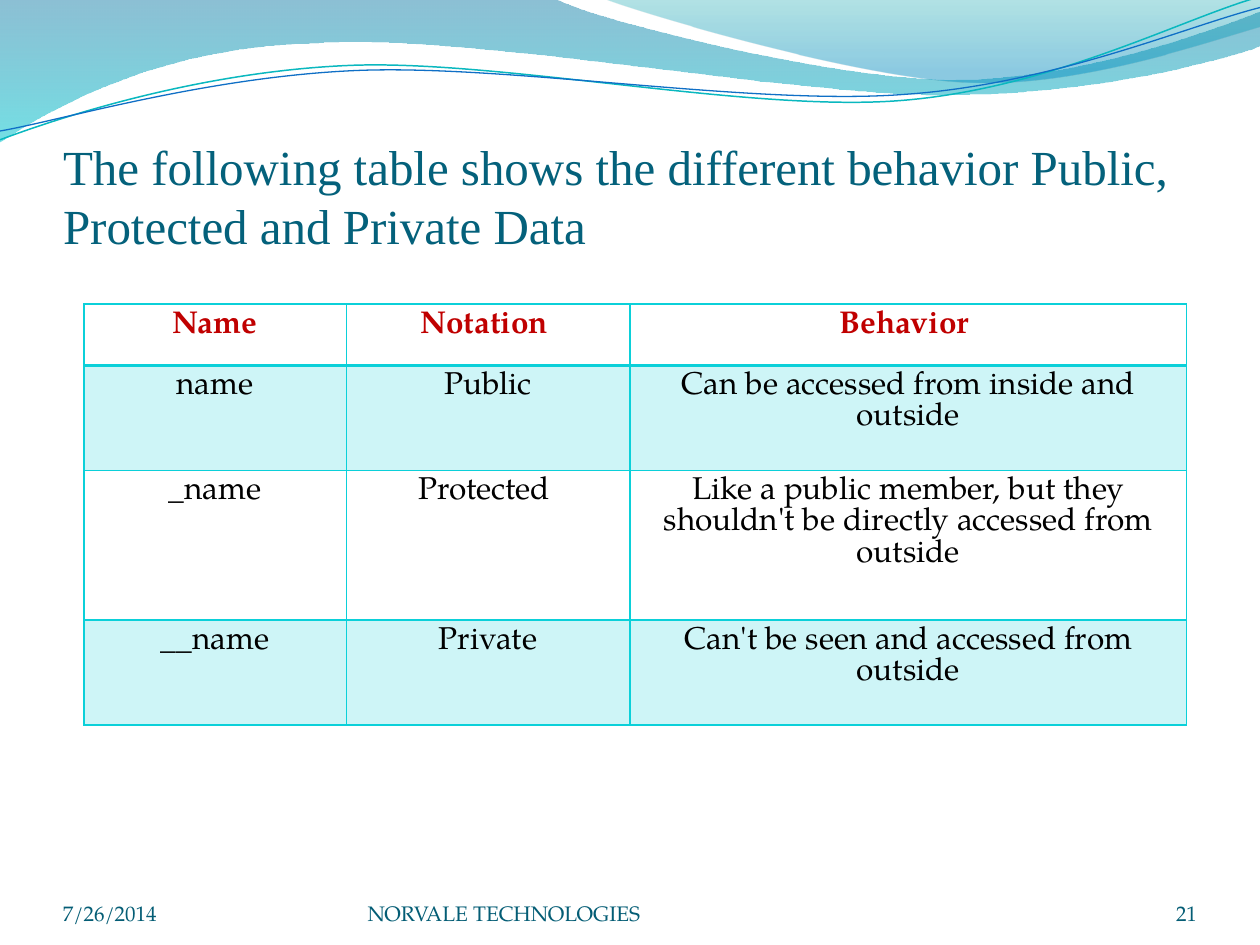
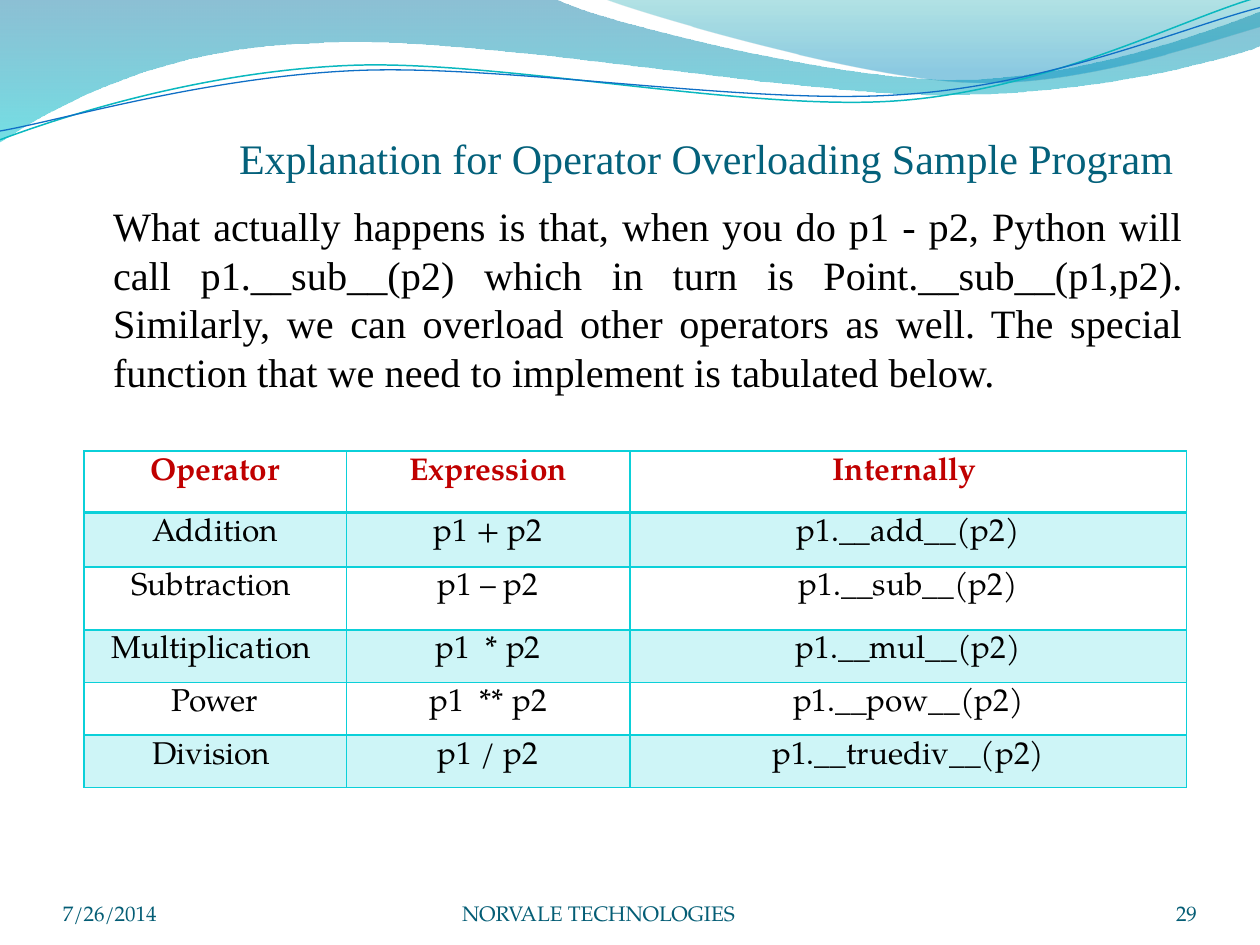
from lxml.etree import SubElement
from pptx import Presentation
from pptx.dml.color import RGBColor
from pptx.enum.text import MSO_ANCHOR, PP_ALIGN
from pptx.oxml.ns import qn
from pptx.util import Cm, Pt

SERIF = "Times New Roman"
PAGELLA = "TeX Gyre Pagella"
TITLE_TEAL = RGBColor(0x04, 0x61, 0x7B)
FOOTER_TEAL = RGBColor(0x04, 0x5D, 0x75)
HEADER_RED = RGBColor(0xC0, 0x00, 0x00)
BLACK = RGBColor(0x00, 0x00, 0x00)
TURQUOISE = RGBColor(0x0B, 0xD0, 0xD9)
LINE_TEAL = RGBColor(0x0A, 0xB8, 0xBF)
LINE_BLUE = RGBColor(0x0F, 0x6F, 0xC6)
DEEP_BLUE = RGBColor(0x00, 0x74, 0xA1)
AQUA = RGBColor(0x00, 0xC6, 0xCF)
SEA_GREEN = RGBColor(0x00, 0xA1, 0xA9)
SKY_BLUE = RGBColor(0x00, 0x8B, 0xBF)

# Wave outlines in hundredths of the unit: pairs are straight steps, sixes Bezier curves
WAVE_UNIT = Cm(2.54)
BANDS = [
    ([(0, 0), (440, -1), (476, 17, 664, 63, 758, 63), (853, 63, 958, 26, 1000, 9),
      (1001, 36), (983, 44, 870, 76, 746, 75), (622, 75, 382, 28, 257, 34),
      (129, 36, 46, 83, -1, 113)],
     [(0, DEEP_BLUE, 45), (1, AQUA, 55)]),
    ([(479, -1), (509, 11, 682, 62, 769, 65), (856, 69, 961, 32, 1000, 21), (1000, 0)],
     [(0, SEA_GREEN, 30), (0.8, SKY_BLUE, 45)]),
]
WAVE_LINES = [
    ([(0, 111), (48, 93, 158, 57, 277, 52), (395, 47, 593, 89, 713, 80),
      (833, 71, 938, 15, 998, -2)], LINE_TEAL, 0.85),
    ([(0, 104), (47, 96, 164, 61, 283, 56), (403, 51, 597, 84, 717, 75),
      (836, 67, 941, 21, 1000, 6)], LINE_BLUE, 0.75),
]

# Slide contents; title boxes are left, top, width, height in cm
COLUMN_WIDTHS = [5.29, 5.72, 11.22]
SLIDES = [
    {
        "title": "The following table shows the different behavior Public, "
                 "Protected and Private Data",
        "title_box": (1.27, 2.74, 22.86, 2.39), "title_size": 28, "title_pitch": 33.7,
        "body": None,
        "number": "21", "footer_align": PP_ALIGN.LEFT,
        "table_top": 6.13, "row_heights": [1.23, 2.12, 3.02, 2.12],
        "rows": [
            ("Name", "Notation ", "Behavior "),
            ("name", "Public", "Can be accessed from inside and outside"),
            ("_name", "Protected ",
             "Like a public member, but they shouldn't be directly accessed from outside"),
            ("__name", "Private", "Can't be seen and accessed from outside"),
        ],
    },
    {
        "title": "Explanation for Operator Overloading Sample Program",
        "title_box": (4.82, 2.48, 19.3, 1.21), "title_size": 24, "title_pitch": 28.9,
        "body": "What actually happens is that, when you do p1 - p2, Python will "
                "call p1.__sub__(p2) which in turn is Point.__sub__(p1,p2). "
                "Similarly, we can overload other operators as well. The special "
                "function that we need to implement is tabulated below.",
        "number": "29", "footer_align": PP_ALIGN.CENTER,
        "table_top": 9.09, "row_heights": [1.24, 1.1, 1.27, 1.06, 1.06, 1.06],
        "rows": [
            ("Operator", "Expression", "Internally "),
            ("Addition", "p1 + p2", "p1.__add__(p2)"),
            ("Subtraction ", "p1 – p2", "p1.__sub__(p2)"),
            ("Multiplication ", "p1  * p2", "p1.__mul__(p2)"),
            ("Power", "p1  ** p2", "p1.__pow__(p2)"),
            ("Division ", "p1 / p2", "p1.__truediv__(p2)"),
        ],
    },
]


def write_text(frame, text, size, font, colour, align, pitch=None, bold=False):
    frame.word_wrap = True
    para = frame.paragraphs[0]
    para.alignment = align
    if pitch:
        para.line_spacing = Pt(pitch)
    span = para.add_run()
    span.text = text
    span.font.size = Pt(size)
    span.font.name = font
    span.font.bold = bold
    span.font.color.rgb = colour


def add_wave(shapes, outline, closed):
    points = [step[i:i + 2] for step in outline for i in range(0, len(step), 2)]
    builder = shapes.build_freeform(*points[0], scale=WAVE_UNIT / 100)
    builder.add_line_segments(points[1:], close=closed)
    wave = builder.convert_to_shape()
    wave.shadow.inherit = False
    # Join each three control points into one curve
    segments = iter(list(wave.element.iter(qn("a:lnTo"))))
    for step in outline[1:]:
        segment = next(segments)
        if len(step) == 6:
            curve = segment.makeelement(qn("a:cubicBezTo"))
            segment.addprevious(curve)
            for part in (segment, next(segments), next(segments)):
                curve.append(part[0])
                part.getparent().remove(part)
    return wave


deck = Presentation()
deck.slide_width = Cm(25.4)
deck.slide_height = Cm(19.05)

for content in SLIDES:
    page = deck.slides.add_slide(deck.slide_layouts[5])
    shapes = page.shapes

    # Wave bands and lines across the top
    for outline, stops in BANDS:
        band = add_wave(shapes, outline, True)
        band.line.fill.background()
        band.fill.gradient()
        band.fill.gradient_angle = 270
        for stop, (position, colour, _) in zip(band.fill.gradient_stops, stops):
            stop.position = position
            stop.color.rgb = colour
        for tint, (_, _, opacity) in zip(band.element.iter(qn("a:srgbClr")), stops):
            SubElement(tint, qn("a:alpha")).set("val", str(opacity * 1000))
    for outline, colour, width in WAVE_LINES:
        wave_line = add_wave(shapes, outline, False)
        wave_line.fill.background()
        wave_line.line.color.rgb = colour
        wave_line.line.width = Pt(width)

    # Title
    title = shapes.title
    title.left, title.top, title.width, title.height = map(Cm, content["title_box"])
    write_text(title.text_frame, content["title"], content["title_size"], SERIF,
               TITLE_TEAL, PP_ALIGN.LEFT, content["title_pitch"])
    framed = [(title, MSO_ANCHOR.BOTTOM)]

    # Explanation
    if content["body"]:
        box = shapes.add_textbox(Cm(2.28), Cm(4.05), Cm(21.59), Cm(4.4))
        write_text(box.text_frame, content["body"], 23, SERIF, BLACK,
                   PP_ALIGN.JUSTIFY, 27.8)
        framed.append((box, MSO_ANCHOR.TOP))

    # Footer: date, company, slide number
    for left, width, text, align in [
        (1.27, 5.92, "7/26/2014", PP_ALIGN.LEFT),
        (7.41, 9.32, "NORVALE TECHNOLOGIES", content["footer_align"]),
        (22.01, 2.12, content["number"], PP_ALIGN.RIGHT),
    ]:
        box = shapes.add_textbox(Cm(left), Cm(17.65), Cm(width), Cm(1.02))
        write_text(box.text_frame, text, 12, PAGELLA, FOOTER_TEAL, align)
        framed.append((box, MSO_ANCHOR.BOTTOM))

    for box, anchor in framed:
        frame = box.text_frame
        frame.vertical_anchor = anchor
        frame.margin_left = frame.margin_top = frame.margin_right = frame.margin_bottom = 0

    # Table
    rows, heights = content["rows"], content["row_heights"]
    table = shapes.add_table(len(rows), len(COLUMN_WIDTHS), Cm(1.69),
                             Cm(content["table_top"]), Cm(sum(COLUMN_WIDTHS)),
                             Cm(sum(heights))).table
    table.first_row = table.horz_banding = False
    for column, width in zip(table.columns, COLUMN_WIDTHS):
        column.width = Cm(width)
    for r, (row, height) in enumerate(zip(rows, heights)):
        table.rows[r].height = Cm(height)
        header = r == 0
        for c, text in enumerate(row):
            cell = table.cell(r, c)
            write_text(cell.text_frame, text, 18, PAGELLA, HEADER_RED if header else BLACK,
                       PP_ALIGN.CENTER, 18, header)
            properties = cell._tc.get_or_add_tcPr()
            for side in ("lnL", "lnR", "lnT", "lnB"):
                thick = (r, side) in [(0, "lnB"), (1, "lnT")]
                border = SubElement(properties, qn("a:" + side))
                border.set("w", str(Pt(2 if thick else 1)))
                border_fill = SubElement(border, qn("a:solidFill"))
                SubElement(border_fill, qn("a:srgbClr")).set("val", str(TURQUOISE))
            if r % 2:
                cell.fill.solid()
                cell.fill.fore_color.rgb = TURQUOISE
                tint = properties.find(qn("a:solidFill")).find(qn("a:srgbClr"))
                SubElement(tint, qn("a:alpha")).set("val", "20000")
            else:
                cell.fill.background()

deck.save("out.pptx")
